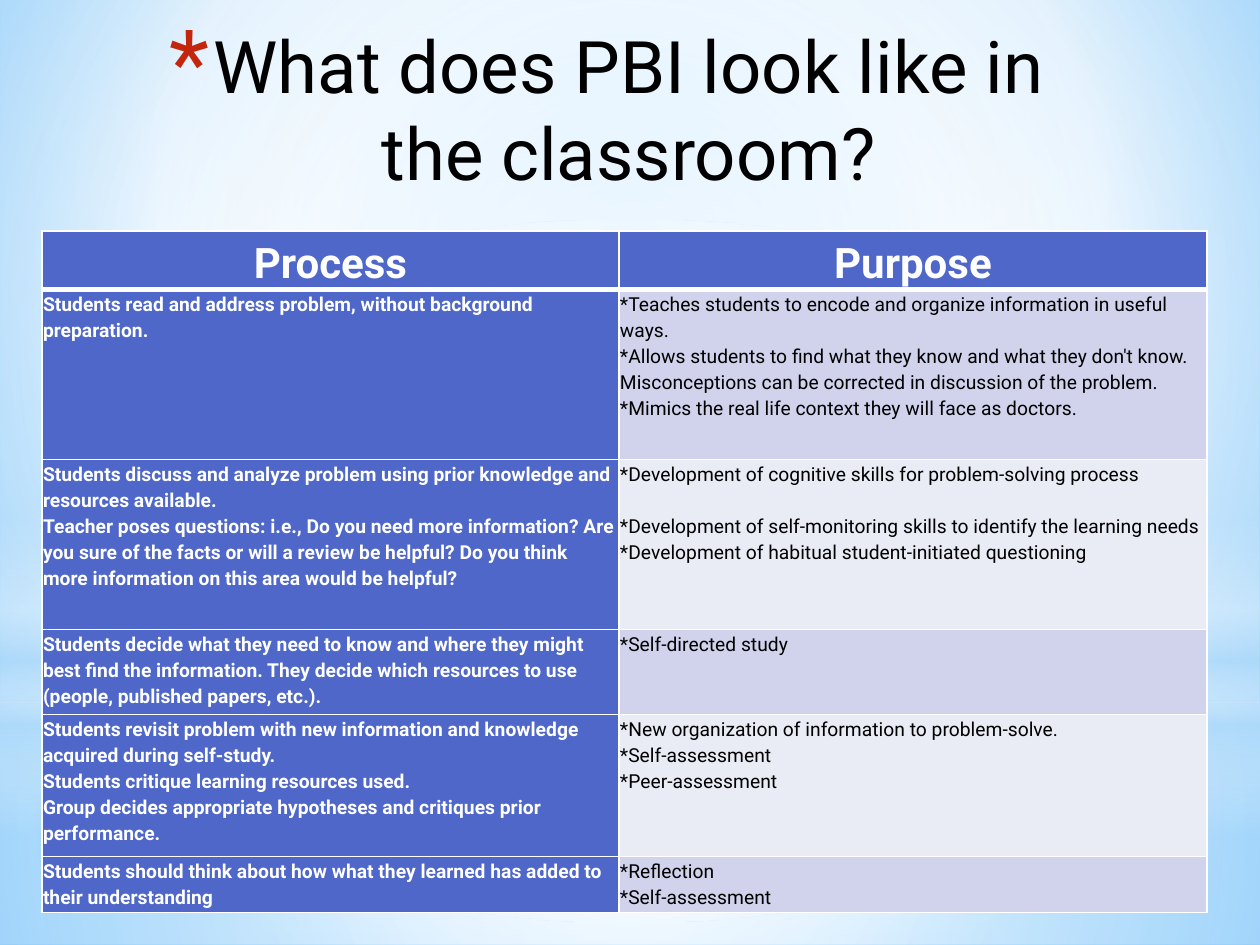
from lxml.etree import SubElement
from pptx import Presentation
from pptx.dml.color import RGBColor
from pptx.enum.shapes import MSO_SHAPE as Shape
from pptx.enum.text import MSO_ANCHOR as Anchor, MSO_AUTO_SIZE as AutoSize, PP_ALIGN as Align
from pptx.oxml.ns import qn
from pptx.util import Pt

PX = 914400 // 126
FONT = "Roboto"
COLORS = {
    "white": "FFFFFF", "black": "000000", "sky": "9ED5FF", "azure": "5BB9FF",
    "mist": "B4DCFA", "star": "C3260C", "indigo": "4E67C8",
    "band": "D0D3EB", "pale": "E9EBF5",
}

TITLE = "What does PBI look like in the classroom?"
HEADINGS = ["Process", "Purpose"]
STEPS = [
    (["Students read and address problem, without background preparation."],
     ["*Teaches students to encode and organize information in useful ways.",
      "*Allows students to find what they know and what they don't know. "
      "Misconceptions can be corrected in discussion of the problem.",
      "*Mimics the real life context they will face as doctors."]),
    (["Students discuss and analyze problem using prior knowledge and resources available.",
      "Teacher poses questions: i.e., Do you need more information? Are you sure of the facts "
      "or will a review be helpful? Do you think more information on this area would be helpful?"],
     ["*Development of cognitive skills for problem-solving process",
      "*Development of self-monitoring skills to identify the learning needs",
      "*Development of habitual student-initiated questioning"]),
    (["Students decide what they need to know and where they might best find the information. "
      "They decide which resources to use (people, published papers, etc.)."],
     ["*Self-directed study"]),
    (["Students revisit problem with new information and knowledge acquired during self-study.",
      "Students critique learning resources used.",
      "Group decides appropriate hypotheses and critiques prior performance."],
     ["*New organization of information to problem-solve.",
      "*Self-assessment",
      "*Peer-assessment"]),
    (["Students should think about how what they learned has added to their understanding"],
     ["*Reflection",
      "*Self-assessment"]),
]
SPACED = {(2, 1, 1): 14.8}
COLUMN_WIDTHS = [577, 588]
ROW_HEIGHTS = [58, 170, 170, 85, 142, 56]

SKY_STOPS = [(0, "sky", 100), (60, "white", 100), (100, "azure", 100)]
SKY_FOCUS = (20, 10, 20, 60)
CENTER = (50, 50, 50, 50)
GLOWS = [
    (Shape.RECTANGLE, (0, 703, 1260, 242), CENTER,
     [(0, "white", 91), (37, "white", 76), (100, "mist", 79)]),
    (Shape.RECTANGLE, (0, 0, 1260, 703), CENTER,
     [(0, "white", 89), (48, "white", 62), (100, "mist", 79)]),
    (Shape.RECTANGLE, (0, 519, 1260, 315), None,
     [(0, "white", 0), (29, "white", 30), (45, "mist", 40),
      (55, "white", 26), (65, "mist", 60), (100, "white", 0)]),
    (Shape.OVAL, (0, 220, 1260, 703), CENTER,
     [(0, "white", 100), (56, "white", 0)]),
]


def px(*lengths):
    return [length * PX for length in lengths]


def rgb(name):
    return RGBColor.from_string(COLORS[name])


def node(parent, tag, **attrs):
    return SubElement(parent, qn(tag), {key: str(value) for key, value in attrs.items()})


def fill_gradient(fill, holder, stops, focus):
    fill.gradient()
    gradient = holder.find(qn("a:gradFill"))
    for child in list(gradient):
        gradient.remove(child)
    stop_list = node(gradient, "a:gsLst")
    for position, name, opacity in stops:
        stop = node(stop_list, "a:gs", pos=position * 1000)
        color = node(stop, "a:srgbClr", val=COLORS[name])
        if opacity < 100:
            node(color, "a:alpha", val=opacity * 1000)
    if focus:
        route = node(gradient, "a:path", path="circle")
        node(route, "a:fillToRect", **dict(zip("ltrb", (edge * 1000 for edge in focus))))
    else:
        node(gradient, "a:lin", ang=90 * 60000, scaled=0)


def add_text(paragraph, text, size, color, bold=False):
    run = paragraph.add_run()
    run.text = text
    run.font.name = FONT
    run.font.size = Pt(size)
    run.font.bold = bold
    run.font.color.rgb = rgb(color)


def set_insets(target, inset):
    target.margin_left = target.margin_right = target.margin_top = target.margin_bottom = inset


def draw_borders(cell, **widths):
    properties = cell._tc.get_or_add_tcPr()
    for side in "LRTB":
        line = node(properties, f"a:ln{side}", w=Pt(widths.get(side, 1)))
        node(node(line, "a:solidFill"), "a:srgbClr", val=COLORS["white"])


def add_backdrop(slide):
    sky = slide.background.fill
    sky.gradient()
    fill_gradient(sky, slide._element.find(".//" + qn("p:bgPr")), SKY_STOPS, SKY_FOCUS)
    for outline, box, focus, stops in GLOWS:
        glow = slide.shapes.add_shape(outline, *px(*box))
        glow.shadow.inherit = False
        glow.line.fill.background()
        fill_gradient(glow.fill, glow._element.spPr, stops, focus)


def add_title(slide):
    title = slide.shapes.title
    slide.shapes._spTree.append(title._element)
    title.left, title.top, title.width, title.height = px(158, 10, 897, 158)
    frame = title.text_frame
    frame.word_wrap = True
    frame.auto_size = AutoSize.NONE
    frame.vertical_anchor = Anchor.TOP
    set_insets(frame, 11 * PX)
    heading = frame.paragraphs[0]
    heading.alignment = Align.CENTER
    add_text(heading, TITLE, 41.4, "black")
    properties = heading._p.get_or_add_pPr()
    properties.set("marL", str(44 * PX))
    properties.set("indent", str(-44 * PX))
    node(node(properties, "a:buClr"), "a:srgbClr", val=COLORS["star"])
    node(properties, "a:buSzPct", val=128000)
    node(properties, "a:buFont", typeface=FONT)
    node(properties, "a:buChar", char="*")


def add_process_table(slide):
    rows = [[[heading] for heading in HEADINGS], *STEPS]
    box = px(42, 231, sum(COLUMN_WIDTHS), sum(ROW_HEIGHTS))
    table = slide.shapes.add_table(len(rows), len(HEADINGS), *box).table
    for column, width in zip(table.columns, COLUMN_WIDTHS):
        column.width = width * PX
    for row, height in zip(table.rows, ROW_HEIGHTS):
        row.height = height * PX
    for r, entries in enumerate(rows):
        header = r == 0
        for c, lines in enumerate(entries):
            cell = table.cell(r, c)
            strong = header or c == 0
            set_insets(cell, PX)
            draw_borders(cell, B=3 if header else 1, T=3 if r == 1 else 1)
            cell.fill.solid()
            cell.fill.fore_color.rgb = rgb("indigo" if strong else "band" if r % 2 else "pale")
            for i, line in enumerate(lines):
                frame = cell.text_frame
                paragraph = frame.add_paragraph() if i else frame.paragraphs[0]
                paragraph.alignment = Align.CENTER if header else Align.LEFT
                paragraph.line_spacing = 1.15
                paragraph.space_before = Pt(SPACED.get((r, c, i), 0))
                add_text(paragraph, line, 24 if header else 11,
                         "white" if strong else "black", strong)


def main():
    deck = Presentation()
    deck.slide_width, deck.slide_height = px(1260, 945)
    slide = deck.slides.add_slide(deck.slide_layouts[5])
    add_backdrop(slide)
    add_title(slide)
    add_process_table(slide)
    deck.save("out.pptx")


if __name__ == "__main__":
    main()
